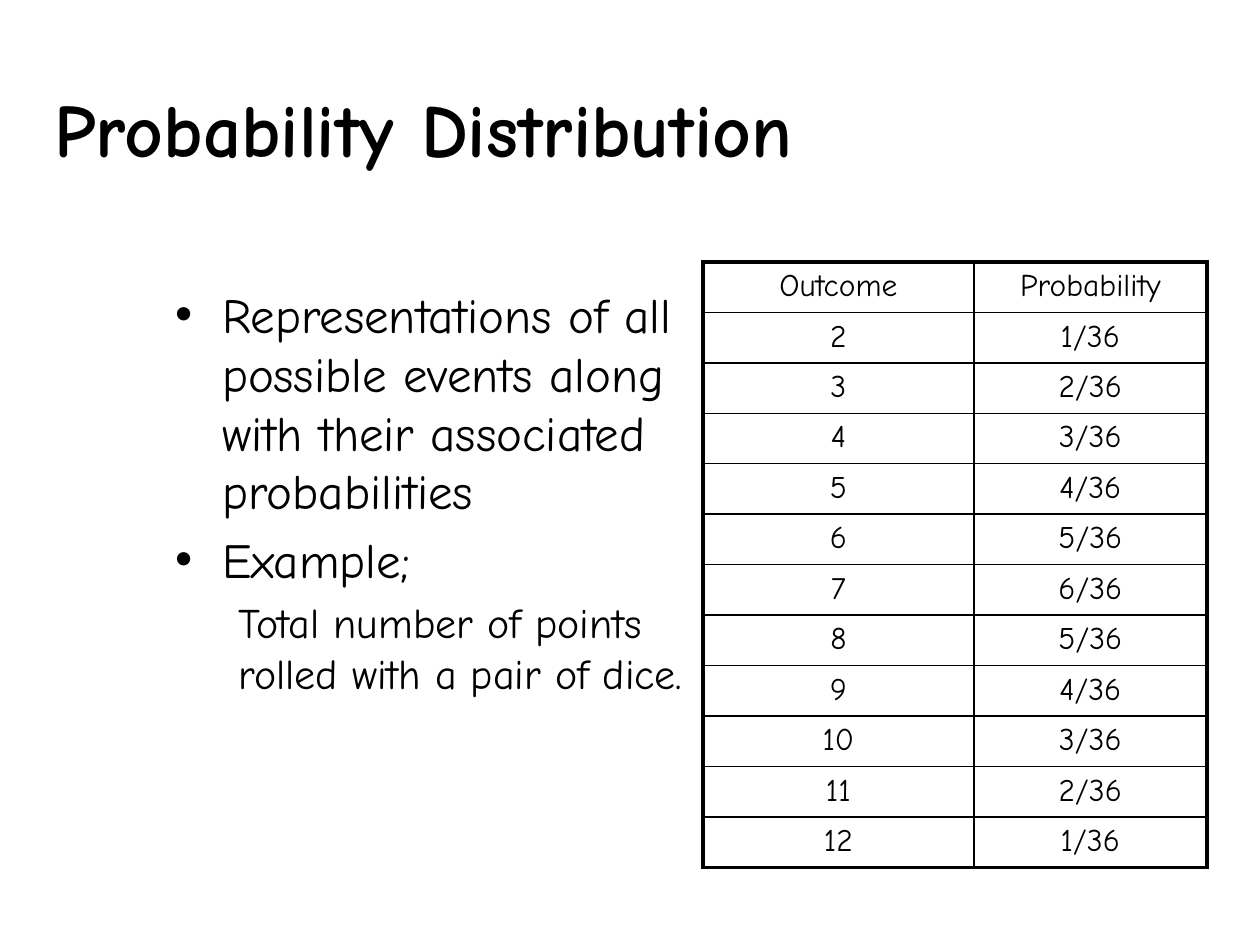
from dataclasses import dataclass

from lxml.etree import SubElement
from pptx import Presentation
from pptx.dml.color import RGBColor
from pptx.enum.text import MSO_ANCHOR as Anchor, PP_ALIGN as Align
from pptx.oxml.ns import qn
from pptx.slide import Slide
from pptx.util import Cm, Pt

BLACK = RGBColor(0, 0, 0)
THIN, THICK = Pt(1), Pt(2.25)


@dataclass
class DistributionSlide:
    """Draws titles, bulleted text and ruled tables on one slide in one style."""

    slide: Slide
    font_name: str = "Comic Neue"
    ink: RGBColor = BLACK

    def style(self, paragraph, size, bold=False):
        font = paragraph.font
        font.name, font.size, font.bold = self.font_name, Pt(size), bold
        font.color.rgb = self.ink

    def frame(self, left, top, width, height):
        box = self.slide.shapes.add_textbox(Cm(left), Cm(top), Cm(width), Cm(height))
        box.text_frame.word_wrap = True
        return box.text_frame

    def title(self, text, *place):
        heading = self.frame(*place)
        heading.vertical_anchor = Anchor.BOTTOM
        heading.text = text
        self.style(heading.paragraphs[0], 43, bold=True)

    def points(self, items, *place):
        body = self.frame(*place)
        body.margin_right = 0
        body.text = "\n".join(text for text, _ in items)
        for paragraph, (_, level) in zip(body.paragraphs, items):
            size = 24 if level else 28
            self.style(paragraph, size)
            paragraph.level = level
            paragraph.space_before = Pt(size * 0.2)
            props = paragraph._p.get_or_add_pPr()
            props.set("marL", str(Cm(1.27 if level else 0.95)))
            props.set("indent", str(Cm(0 if level else -0.95)))
            if level:
                SubElement(props, qn("a:buNone"))
            else:
                SubElement(props, qn("a:buFont"), typeface="Arial")
                SubElement(props, qn("a:buChar"), char="•")

    def border(self, cell, side, width):
        line = SubElement(cell._tc.get_or_add_tcPr(), qn(f"a:ln{side}"), w=str(width))
        fill = SubElement(line, qn("a:solidFill"))
        SubElement(fill, qn("a:srgbClr"), val=str(self.ink))

    def table(self, rows, left, top, widths, row_height):
        last_row, last_column = len(rows) - 1, len(widths) - 1
        grid = self.slide.shapes.add_table(
            len(rows), len(widths), Cm(left), Cm(top),
            Cm(sum(widths)), Cm(row_height * len(rows))).table
        grid.first_row = grid.horz_banding = False
        for column, width in zip(grid.columns, widths):
            column.width = Cm(width)
        for r, row in enumerate(rows):
            grid.rows[r].height = Cm(row_height)
            for c, text in enumerate(row):
                cell = grid.cell(r, c)
                cell.text = text
                entry = cell.text_frame.paragraphs[0]
                entry.alignment = Align.CENTER
                self.style(entry, 18)
                outer = {"L": c == 0, "R": c == last_column,
                         "T": r == 0, "B": r == last_row}
                for side, is_outer in outer.items():
                    self.border(cell, side, THICK if is_outer else THIN)
                cell.fill.background()


def main():
    deck = Presentation()
    deck.slide_width, deck.slide_height = Cm(25.4), Cm(19.05)
    page = DistributionSlide(deck.slides.add_slide(deck.slide_layouts[6]))
    page.title("Probability Distribution", 0.84, 0.84, 23.93, 2.77)
    page.points([
        ("Representations of all possible events along with their associated probabilities", 0),
        ("Example;", 0),
        ("Total number of points rolled with a pair of dice.", 1),
    ], 3.28, 5.61, 11, 11.43)
    odds = [(str(total), f"{6 - abs(total - 7)}/36") for total in range(2, 13)]
    page.table([("Outcome", "Probability"), *odds], 14.17, 5.28, (5.46, 4.7), 0.99)
    deck.save("out.pptx")


if __name__ == "__main__":
    main()
